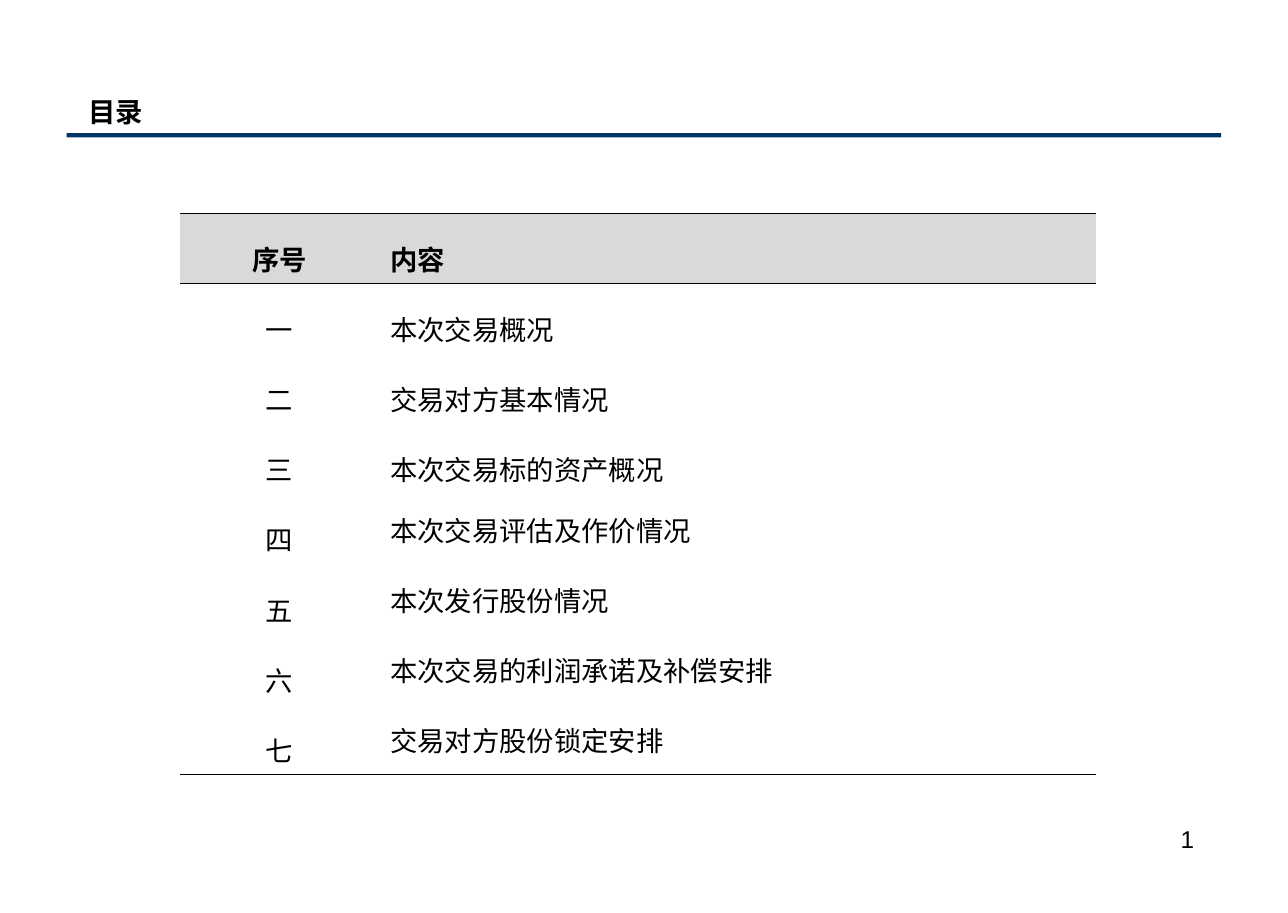
from lxml import etree
from pptx import Presentation, util as u
from pptx.dml.color import RGBColor
from pptx.enum import shapes, text
from pptx.oxml import ns

theme = {
    "ink": RGBColor.from_string("000000"),
    "navy": RGBColor.from_string("003366"),
    "gray": RGBColor.from_string("D9D9D9"),
    "size": u.Pt(18),
    "small": u.Pt(16),
    "latin": "Arial",
    "asian": "Noto Sans CJK SC",
    "rule": u.Pt(1),
    "plain": "{2D5ABB26-0587-4C30-8999-92F81FD0307C}",
}
mid, top = text.MSO_ANCHOR.MIDDLE, text.MSO_ANCHOR.TOP
left, center, right = text.PP_ALIGN.LEFT, text.PP_ALIGN.CENTER, text.PP_ALIGN.RIGHT


def write(frame, words, align, space=1.0, **form):
    para = frame.paragraphs[0]
    para.alignment = align
    para.line_spacing = space
    run = para.add_run()
    run.text = words
    run.font.color.rgb = theme["ink"]
    base = {"size": theme["size"], "name": theme["latin"], "bold": False}
    for key, value in {**base, **form}.items():
        setattr(run.font, key, value)
    face = etree.SubElement(run.font._element, ns.qn("a:ea"))
    face.set("typeface", theme["asian"])


def edge(cell, side, shown):
    props = cell._tc.get_or_add_tcPr()
    line = etree.SubElement(props, ns.qn("a:ln" + side), w=str(theme["rule"]))
    if shown:
        fill = etree.SubElement(line, ns.qn("a:solidFill"))
        etree.SubElement(fill, ns.qn("a:srgbClr"), val=str(theme["ink"]))
    else:
        etree.SubElement(line, ns.qn("a:noFill"))


deck = Presentation()
deck.slide_width, deck.slide_height = u.Cm(29.9), u.Cm(21.2)
slide = deck.slides.add_slide(deck.slide_layouts[6])

bar = slide.shapes.add_shape(
    shapes.MSO_SHAPE.RECTANGLE, u.Cm(1.55), u.Cm(3.09), u.Cm(26.8), u.Cm(0.1)
)
bar.shadow.inherit = False
bar.fill.solid()
bar.fill.fore_color.rgb = theme["navy"]
bar.line.fill.background()

labels = [
    ("1", (25.74, 18.98, 2.26, 1.47), top, right, {"size": theme["small"]}),
    ("目录", (1.77, 1.99, 22.7, 1.19), mid, left, {"bold": True}),
]
for words, area, anchor, align, form in labels:
    frame = slide.shapes.add_textbox(*map(u.Cm, area)).text_frame
    layout = {
        "word_wrap": True,
        "vertical_anchor": anchor,
        "margin_left": u.Cm(0.28),
        "margin_right": u.Cm(0.28),
        "margin_top": u.Cm(0.15),
        "margin_bottom": u.Cm(0.15),
    }
    for key, value in layout.items():
        setattr(frame, key, value)
    write(frame, words, align, **form)

items = [
    ("序号", "内容"),
    ("一", "本次交易概况"),
    ("二", "交易对方基本情况"),
    ("三", "本次交易标的资产概况"),
    ("四", "本次交易评估及作价情况"),
    ("五", "本次发行股份情况"),
    ("六", "本次交易的利润承诺及补偿安排"),
    ("七", "交易对方股份锁定安排"),
]
last = len(items) - 1
table = slide.shapes.add_table(
    len(items), 2, u.Cm(4.18), u.Cm(4.95), u.Cm(21.26), u.Cm(13.07)
).table
table.first_row = table.horz_banding = False
table._tbl.tblPr.find(ns.qn("a:tableStyleId")).text = theme["plain"]
for col, width in zip(table.columns, (4.62, 16.64)):
    col.width = u.Cm(width)

for r, item in enumerate(items):
    table.rows[r].height = u.Cm(1.63)
    for c, words in enumerate(item):
        cell = table.cell(r, c)
        tight = c == 1 and r > 3
        cell.vertical_anchor = mid if tight else top
        write(
            cell.text_frame,
            words,
            left if c else center,
            1.0 if tight else 1.5,
            name=theme["asian"],
            bold=r == 0,
        )
        for side, shown in (
            ("L", False),
            ("R", False),
            ("T", r < 2),
            ("B", r in (0, last)),
        ):
            edge(cell, side, shown)
        if r:
            cell.fill.background()
        else:
            cell.fill.solid()
            cell.fill.fore_color.rgb = theme["gray"]

deck.save("out.pptx")
